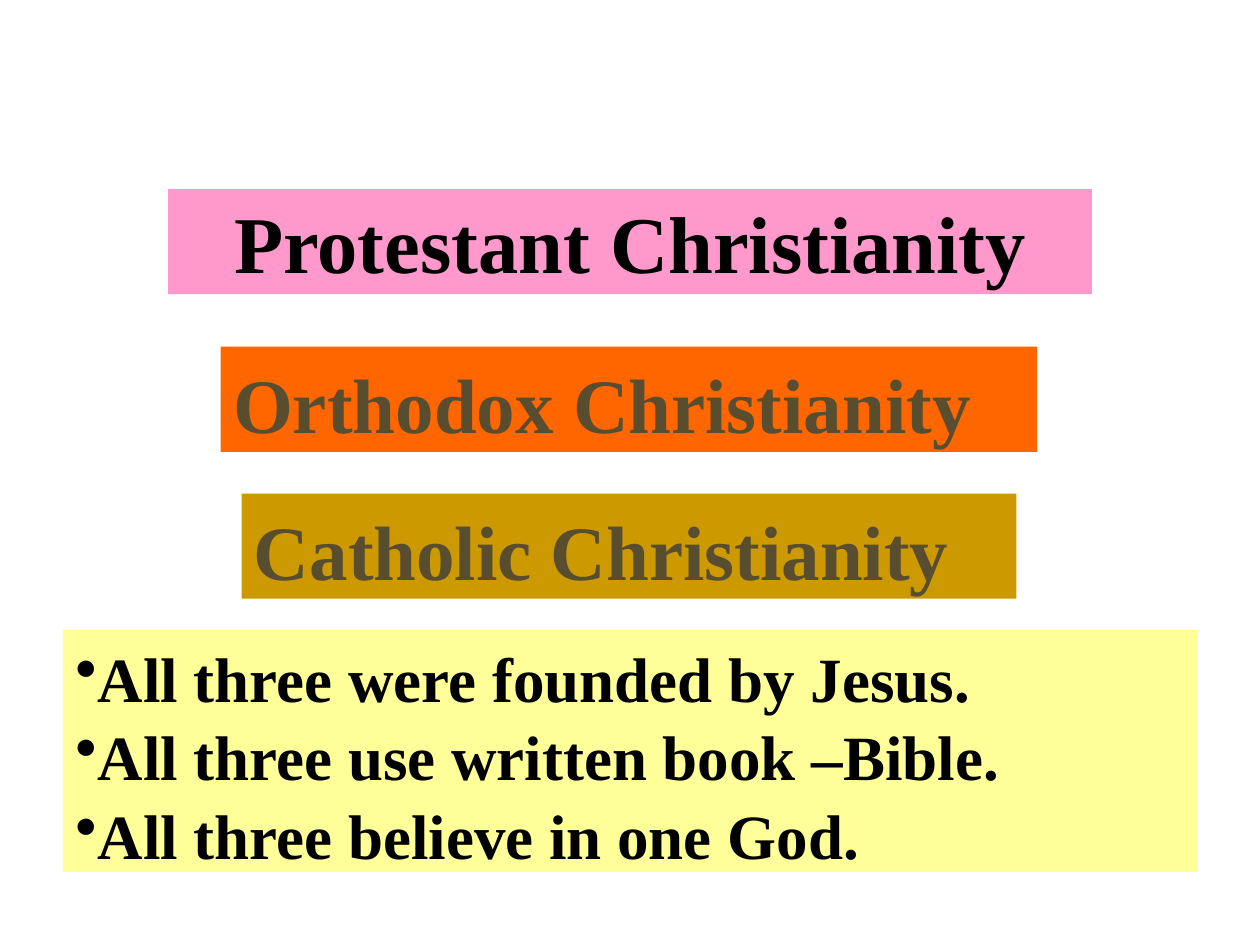
"""Build a slide naming three branches of Christianity and what they share."""
from lxml.etree import SubElement
from pptx import Presentation
from pptx.dml.color import RGBColor
from pptx.enum.text import MSO_ANCHOR, MSO_AUTO_SIZE, PP_ALIGN
from pptx.oxml.ns import qn
from pptx.util import Cm, Pt


def color(value):
    """Turn a hex string into a colour."""
    return RGBColor.from_string(value)


def write(paragraph, text, size, ink):
    """Add one bold run to a paragraph."""
    span = paragraph.add_run()
    span.text = text
    span.font.name = "Times New Roman"
    span.font.size = Pt(size)
    span.font.bold = True
    span.font.color.rgb = color(ink)


deck = Presentation()
deck.slide_width = Cm(25.4)
deck.slide_height = Cm(19.05)
page = deck.slides.add_slide(deck.slide_layouts[5])

title = page.shapes.title
title.left, title.top, title.width, title.height = Cm(3.39), Cm(3.81), Cm(18.62), Cm(2.12)
title.fill.solid()
title.fill.fore_color.rgb = color("FF99CC")
title.text_frame.auto_size = MSO_AUTO_SIZE.NONE
title.text_frame.vertical_anchor = MSO_ANCHOR.MIDDLE
title.text_frame.paragraphs[0].alignment = PP_ALIGN.CENTER
write(title.text_frame.paragraphs[0], "Protestant Christianity", 46, "000000")

shared_beliefs = [
    "All three were founded by Jesus.",
    "All three use written book –Bible.",
    "All three believe in one God.",
]
panels = [
    (4.45, 6.99, 16.46, 2.12, "FF6600", "584D2E", 44, False, ["Orthodox Christianity"]),
    (4.87, 9.95, 15.62, 2.12, "CC9900", "584D2E", 44, False, ["Catholic Christianity"]),
    (1.27, 12.7, 22.86, 4.88, "FFFF99", "000000", 36, True, shared_beliefs),
]
for left, top, width, height, fill, ink, size, bulleted, lines in panels:
    box = page.shapes.add_textbox(Cm(left), Cm(top), Cm(width), Cm(height))
    box.fill.solid()
    box.fill.fore_color.rgb = color(fill)
    frame = box.text_frame
    frame.word_wrap = True
    for index, line in enumerate(lines):
        paragraph = frame.add_paragraph() if index else frame.paragraphs[0]
        paragraph.line_spacing = 1.04
        if bulleted:
            SubElement(paragraph._p.get_or_add_pPr(), qn("a:buChar"), char="•")
        write(paragraph, line, size, ink)

deck.save("out.pptx")
